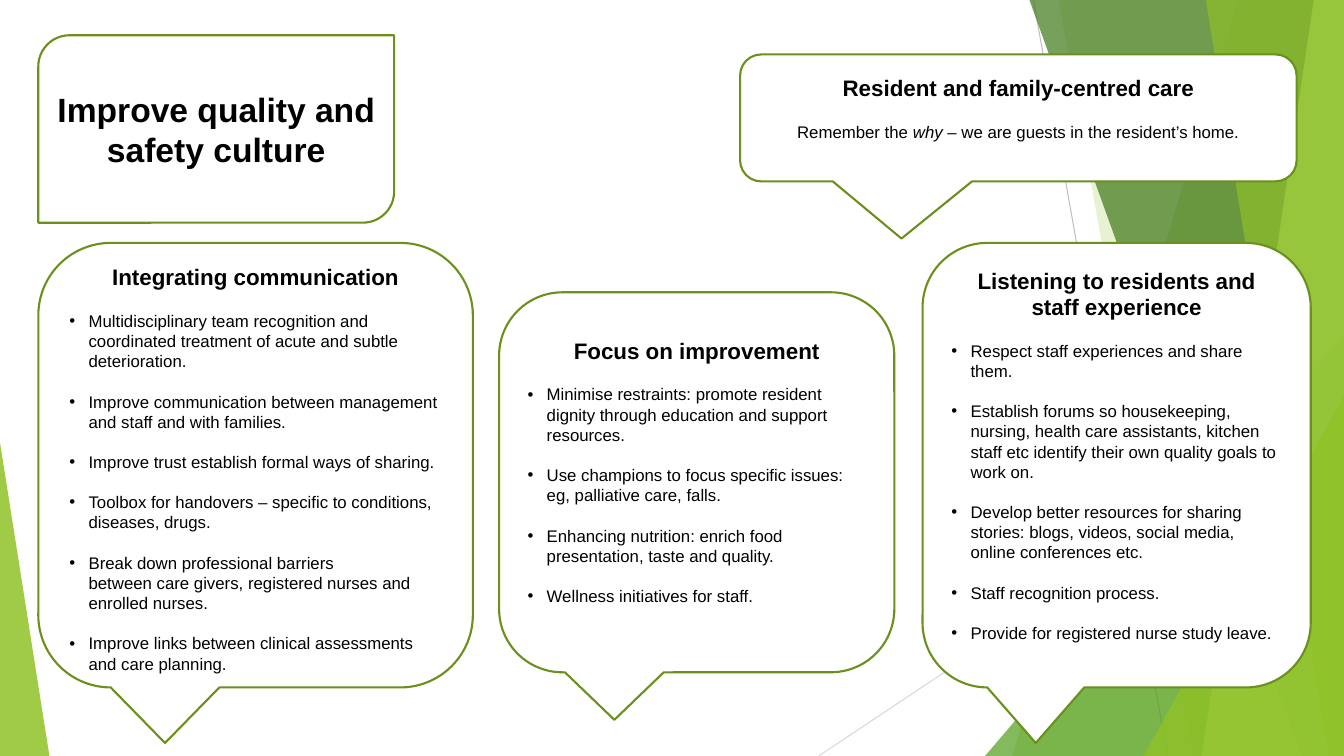
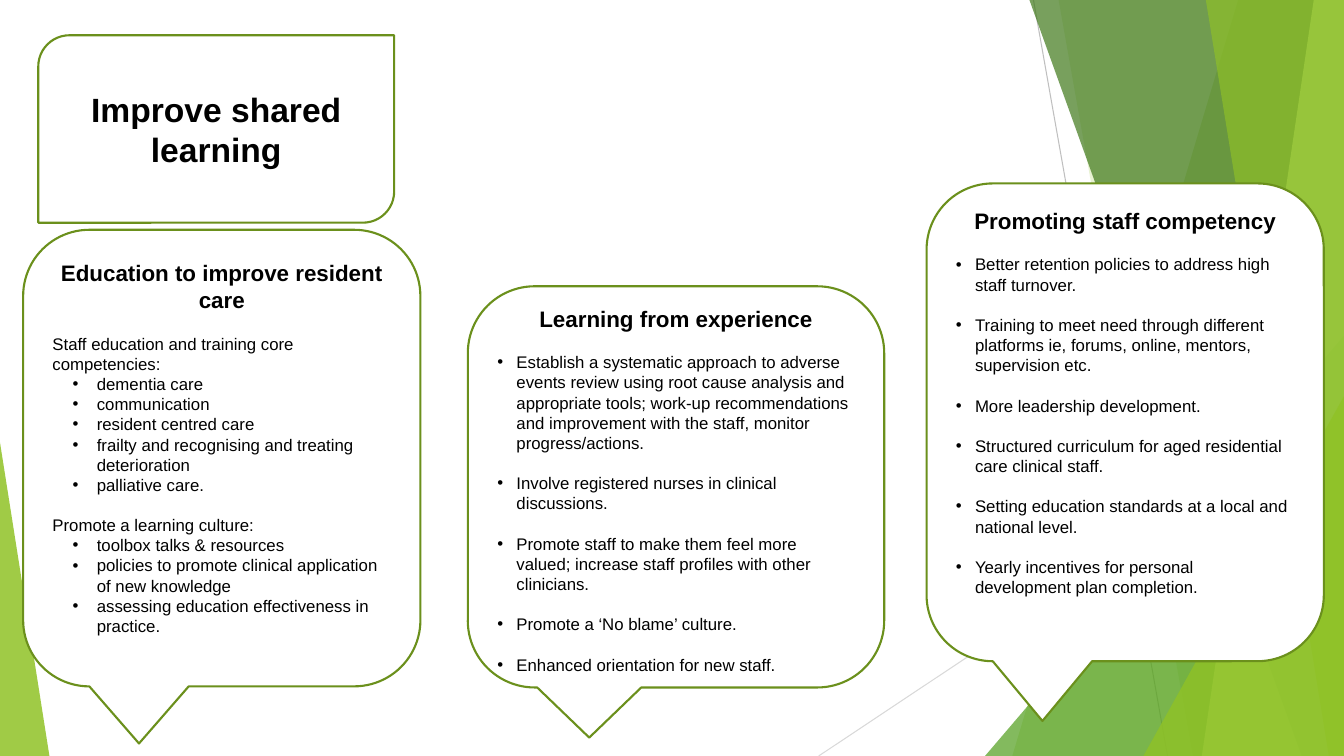
"""Build two slides of green speech callouts on a faceted background."""
from dataclasses import dataclass
from enum import Enum
from typing import Any, NamedTuple

from lxml.etree import SubElement
from pptx import Presentation
from pptx.dml.color import RGBColor
from pptx.enum.shapes import MSO_CONNECTOR, MSO_SHAPE
from pptx.enum.text import MSO_ANCHOR, PP_ALIGN
from pptx.oxml.ns import qn
from pptx.util import Inches, Pt


@dataclass(frozen=True)
class Theme:
    """Colours, font and type sizes."""
    font: str = "Arial"
    ink: str = "000000"
    paper: str = "FFFFFF"
    outline: str = "6B901C"
    lime: str = "90C226"
    leaf: str = "54A021"
    forest: str = "3F7819"
    pale: str = "C0E474"
    rule_dark: str = "BFBFBF"
    rule_light: str = "D9D9D9"
    title: int = 24
    heading: int = 16
    body: int = 12
    leading: float = 1.2
    outline_width: float = 1.5
    rule_width: float = 0.75


T = Theme()
WIDTH, HEIGHT = 13.33, 7.5
CORNER_INSET = 0.05
SIDE_INSET = 0.1


class Kind(Enum):
    """Paragraph kinds: size, bold, centred, gap before, indent, hang."""
    TITLE = (T.title, True, True, False, 0, 0)
    HEADING = (T.heading, True, True, False, 0, 0)
    CENTRED = (T.body, False, True, True, 0, 0)
    LEAD = (T.body, False, False, True, 0, 0)
    BULLET = (T.body, False, False, True, 0.19, 0.19)
    SUB = (T.body, False, False, False, 0.44, 0.24)


class Para(NamedTuple):
    """A paragraph; asterisks mark italics and newlines break lines."""
    text: str
    kind: Kind = Kind.BULLET


class Box(NamedTuple):
    """Position and size in inches."""
    x: float
    y: float
    w: float
    h: float


class Callout(NamedTuple):
    """A speech callout with the height at which its text starts."""
    box: Box
    text_top: float
    heading: str
    paras: list[Para]
    pointer: tuple[float, float] | None = None


class Page(NamedTuple):
    """A slide title and its callouts."""
    title: str
    callouts: list[Callout]


class Rule(NamedTuple):
    """A thin background line."""
    start: tuple[float, float]
    end: tuple[float, float]
    color: str


class Band(NamedTuple):
    """A translucent band reaching the right edge of the slide."""
    top_x: float
    bottom_x: float
    color: str
    alpha: int


class Wedge(NamedTuple):
    """A translucent triangle with its apex at one side."""
    box: Box
    apex: float
    color: str
    alpha: int


BACKDROP = [
    Rule((10.25, 0), (11.58, HEIGHT), T.rule_dark),
    Rule((WIDTH, 4.03), (8.12, HEIGHT), T.rule_light),
    Band(12.28, 10.04, T.lime, 30),
    Band(10.5, 11.83, T.lime, 20),
    Wedge(Box(9.77, 3.33, 3.56, 4.17), 1, T.leaf, 72),
    Band(10.21, 12.91, T.forest, 70),
    Band(13.03, 11.92, T.pale, 70),
    Band(11.96, 13.18, T.lime, 65),
    Wedge(Box(11.34, 3.93, 1.99, 3.57), 1, T.lime, 80),
    Wedge(Box(0, 4.39, 0.49, 3.11), 0, T.lime, 85),
]
TITLE_BOX = Box(0.38, 0.35, 3.53, 1.86)

PAGES = [
    Page("Improve quality and safety culture", [
        Callout(Box(9.15, 2.41, 3.85, 4.41), 2.65, "Listening to residents and staff experience", [
            Para("Respect staff experiences and share them."),
            Para("Establish forums so housekeeping, nursing, health care assistants, "
                 "kitchen staff etc identify their own quality goals to work on."),
            Para("Develop better resources for sharing stories: blogs, videos, "
                 "social media, online conferences etc."),
            Para("Staff recognition process."),
            Para("Provide for registered nurse study leave."),
        ]),
        Callout(Box(4.95, 2.9, 3.92, 3.77), 3.35, "Focus on improvement", [
            Para("Minimise restraints: promote resident dignity through education "
                 "and support resources."),
            Para("Use champions to focus specific issues: eg, palliative care, falls."),
            Para("Enhancing nutrition: enrich food presentation, taste and quality."),
            Para("Wellness initiatives for staff."),
        ]),
        Callout(Box(0.38, 2.41, 4.31, 4.41), 2.62, "Integrating communication", [
            Para("Multidisciplinary team recognition and coordinated treatment of "
                 "acute and subtle deterioration."),
            Para("Improve communication between management and staff and with families."),
            Para("Improve trust establish formal ways of sharing."),
            Para("Toolbox for handovers – specific to conditions, diseases, drugs."),
            Para("Break down professional barriers\nbetween care givers, registered "
                 "nurses and enrolled nurses."),
            Para("Improve links between clinical assessments and care planning."),
        ]),
        Callout(Box(7.34, 0.54, 5.52, 1.26), 0.74, "Resident and family-centred care", [
            Para("Remember the *why* – we are guests in the resident’s home.", Kind.CENTRED),
        ], (-0.21, 0.95)),
    ]),
    Page("Improve shared learning", [
        Callout(Box(9.19, 1.82, 3.94, 4.74), 2.06, "Promoting staff competency", [
            Para("Better retention policies to address high staff turnover."),
            Para("Training to meet need through different platforms ie, forums, "
                 "online, mentors, supervision etc."),
            Para("More leadership development."),
            Para("Structured curriculum for aged residential care clinical staff."),
            Para("Setting education standards at a local and national level."),
            Para("Yearly incentives for personal development plan completion."),
        ]),
        Callout(Box(4.64, 2.84, 4.13, 3.98), 3.03, "Learning from experience", [
            Para("Establish a systematic approach to adverse events review using root "
                 "cause analysis and appropriate tools; work-up recommendations and "
                 "improvement with the staff, monitor progress/actions."),
            Para("Involve registered nurses in clinical discussions."),
            Para("Promote staff to make them feel more valued; increase staff profiles "
                 "with other clinicians."),
            Para("Promote a ‘No blame’ culture."),
            Para("Enhanced orientation for new staff."),
        ]),
        Callout(Box(0.23, 2.28, 3.94, 4.53), 2.58, "Education to improve resident care", [
            Para("Staff education and training core competencies:", Kind.LEAD),
            Para("dementia care", Kind.SUB),
            Para("communication", Kind.SUB),
            Para("resident centred care", Kind.SUB),
            Para("frailty and recognising and treating deterioration", Kind.SUB),
            Para("palliative care.", Kind.SUB),
            Para("Promote a learning culture:", Kind.LEAD),
            Para("toolbox talks & resources", Kind.SUB),
            Para("policies to promote clinical application of new knowledge", Kind.SUB),
            Para("assessing education effectiveness in practice.", Kind.SUB),
        ]),
    ]),
]


def apply(obj: Any, values: dict[str, Any]) -> None:
    """Set each named attribute on an object."""
    for name, value in values.items():
        setattr(obj, name, value)


def paint(sp: Any, color: str, alpha: int = 100) -> None:
    """Fill a shape with a colour at an opacity, without a shadow."""
    sp.shadow.inherit = False
    sp.fill.solid()
    sp.fill.fore_color.rgb = RGBColor.from_string(color)
    if alpha < 100:
        clr = sp._element.spPr.find(f"{qn('a:solidFill')}/{qn('a:srgbClr')}")
        SubElement(clr, qn("a:alpha"), val=str(alpha * 1000))


def stroke(sp: Any, color: str, width: float) -> None:
    """Give a shape or connector a solid line."""
    sp.line.color.rgb = RGBColor.from_string(color)
    sp.line.width = Pt(width)


def add_preset(s: Any, kind: MSO_SHAPE, box: Box) -> Any:
    """Place a preset shape."""
    return s.shapes.add_shape(kind, *map(Inches, box))


def draw_rule(s: Any, rule: Rule) -> None:
    """Draw a thin line."""
    cx = s.shapes.add_connector(MSO_CONNECTOR.STRAIGHT, *map(Inches, rule.start + rule.end))
    stroke(cx, rule.color, T.rule_width)
    SubElement(cx._element.spPr, qn("a:effectLst"))


def draw_band(s: Any, band: Band) -> None:
    """Draw a band from top to bottom of the slide."""
    corners = [(band.top_x, 0), (WIDTH, 0), (WIDTH, HEIGHT), (band.bottom_x, HEIGHT)]
    points = [(Inches(x), Inches(y)) for x, y in corners]
    fb = s.shapes.build_freeform(*points[0])
    fb.add_line_segments(points[1:], close=True)
    sp = fb.convert_to_shape()
    paint(sp, band.color, band.alpha)
    sp.line.fill.background()


def draw_wedge(s: Any, wedge: Wedge) -> None:
    """Draw a right-angled triangle."""
    sp = add_preset(s, MSO_SHAPE.ISOSCELES_TRIANGLE, wedge.box)
    sp.adjustments[0] = wedge.apex
    paint(sp, wedge.color, wedge.alpha)
    sp.line.fill.background()


def write(p: Any, para: Para) -> None:
    """Fill a paragraph with formatted text."""
    size, bold, centred, gap, indent, hang = para.kind.value
    apply(p, {
        "alignment": PP_ALIGN.CENTER if centred else PP_ALIGN.LEFT,
        "line_spacing": Pt(size * T.leading),
        "space_before": Pt(T.body * T.leading if gap else 0),
    })
    if hang:
        pPr = p._p.get_or_add_pPr()
        pPr.set("marL", str(Inches(indent)))
        pPr.set("indent", str(-Inches(hang)))
        SubElement(pPr, qn("a:buFont"), typeface=T.font)
        SubElement(pPr, qn("a:buChar"), char="•")
    for i, line in enumerate(para.text.split("\n")):
        if i:
            p.add_line_break()
        for j, piece in enumerate(line.split("*")):
            r = p.add_run()
            r.text = piece
            apply(r.font, {"name": T.font, "size": Pt(size), "bold": bold, "italic": j % 2 == 1})
            r.font.color.rgb = RGBColor.from_string(T.ink)


def draw_panel(s: Any, kind: MSO_SHAPE, box: Box, paras: list[Para], frame: dict[str, Any]) -> Any:
    """Draw an outlined white shape with text."""
    sp = add_preset(s, kind, box)
    paint(sp, T.paper)
    stroke(sp, T.outline, T.outline_width)
    tf = sp.text_frame
    sides = {"margin_left": Inches(SIDE_INSET), "margin_right": Inches(SIDE_INSET)}
    apply(tf, {"word_wrap": True, **sides, **frame})
    for i, para in enumerate(paras):
        write(tf.add_paragraph() if i else tf.paragraphs[0], para)
    return sp


def draw_callout(s: Any, callout: Callout) -> None:
    """Draw a callout with its heading and paragraphs."""
    box = callout.box
    inset = callout.text_top - box.y - CORNER_INSET * min(box.w, box.h)
    frame = {"vertical_anchor": MSO_ANCHOR.TOP, "margin_top": Inches(inset), "margin_bottom": 0}
    paras = [Para(callout.heading, Kind.HEADING), *callout.paras]
    sp = draw_panel(s, MSO_SHAPE.ROUNDED_RECTANGULAR_CALLOUT, box, paras, frame)
    for i, value in enumerate(callout.pointer or ()):
        sp.adjustments[i] = value


def draw_page(prs: Any, page: Page) -> None:
    """Add a slide with backdrop, callouts and title."""
    s = prs.slides.add_slide(prs.slide_layouts[6])
    painters = {Rule: draw_rule, Band: draw_band, Wedge: draw_wedge}
    for item in BACKDROP:
        painters[type(item)](s, item)
    for callout in page.callouts:
        draw_callout(s, callout)
    draw_panel(s, MSO_SHAPE.ROUND_2_DIAG_RECTANGLE, TITLE_BOX, [Para(page.title, Kind.TITLE)],
               {"vertical_anchor": MSO_ANCHOR.MIDDLE})


def main() -> None:
    """Build and save the presentation."""
    prs = Presentation()
    apply(prs, {"slide_width": Inches(WIDTH), "slide_height": Inches(HEIGHT)})
    for page in PAGES:
        draw_page(prs, page)
    prs.save("out.pptx")


if __name__ == "__main__":
    main()
